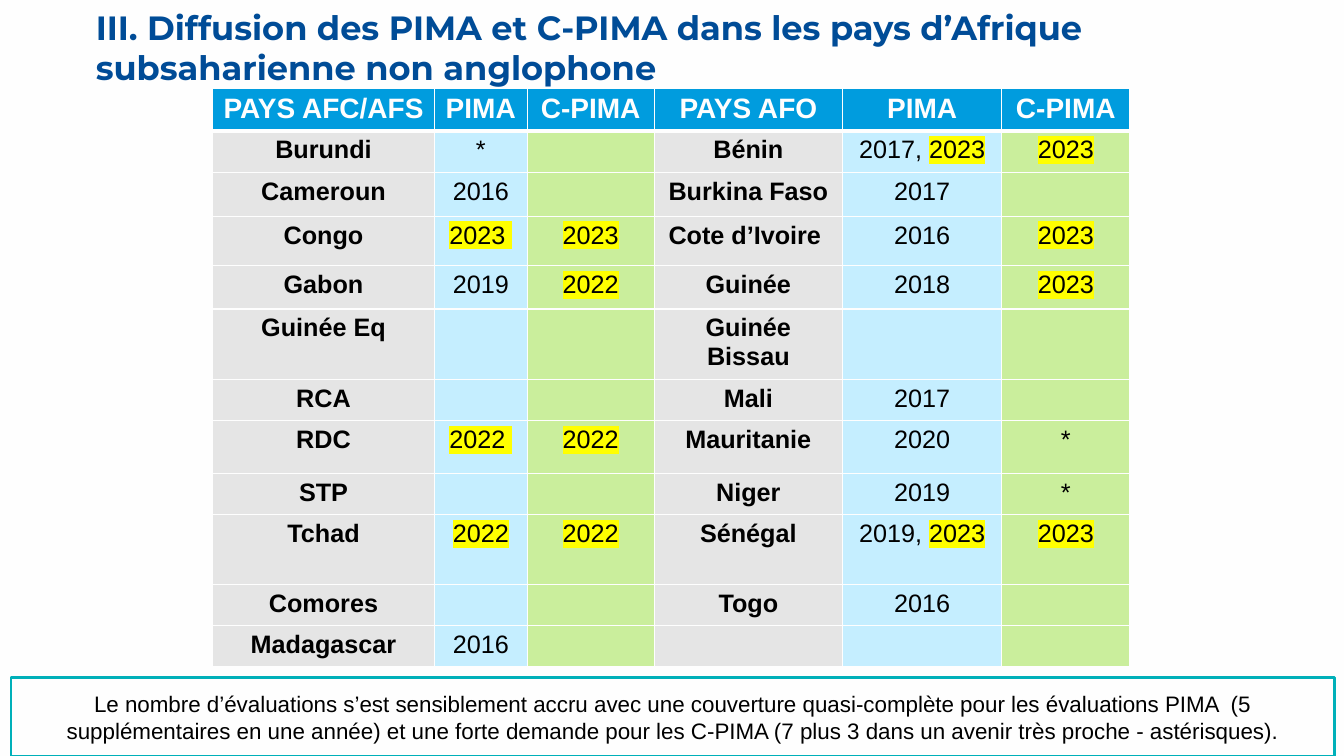
import lxml.etree
import pptx
import pptx.dml.color
import pptx.enum.shapes
import pptx.enum.text
import pptx.oxml.ns
import pptx.util

HEADER = ["PAYS AFC/AFS", "PIMA", "C-PIMA", "PAYS AFO", "PIMA", "C-PIMA"]
COUNTRIES = [
    ["Burundi", "*", "", "Bénin", "2017, 2023", "2023"],
    ["Cameroun", "2016", "", "Burkina Faso", "2017", ""],
    ["Congo", "2023 ", "2023", "Cote d’Ivoire ", "2016", "2023"],
    ["Gabon", "2019", "2022", "Guinée", "2018", "2023"],
    ["Guinée Eq", "", "", "Guinée Bissau", "", ""],
    ["RCA", "", "", "Mali", "2017", ""],
    ["RDC", "2022 ", "2022", "Mauritanie", "2020", "*"],
    ["STP", "", "", "Niger", "2019", "*"],
    ["Tchad", "2022", "2022", "Sénégal", "2019, 2023", "2023"],
    ["Comores", "", "", "Togo", "2016", ""],
    ["Madagascar", "2016", "", "", "", ""],
]
COLUMN_WIDTHS = [26.4, 11.04, 15.12, 22.44, 18.96, 15.24]
ROW_HEIGHTS = [5.1, 4.95, 5.2, 5.9, 5.15, 8.4, 4.8, 6.35, 4.85, 8.3, 4.9, 4.9]
COLUMN_FILLS = ["E5E5E5", "C5EEFF", "CAEE9C"]
WHITE, BLACK, NAVY, BLUE, TEAL, YELLOW = (
    "FEFEFE", "000000", "004C97", "009CDE", "00B0B9", "FFFF00")
RECENT = ("2022", "2023")


def color(code):
    """Turn a hex string into a colour."""
    return pptx.dml.color.RGBColor.from_string(code)


def apply(target, values):
    """Set each named attribute on the target."""
    for name, value in values.items():
        setattr(target, name, value)


class Page:
    """Hold the style and the current slide on a 160 by 90 grid."""

    unit = pptx.util.Inches(1) / 12

    def __init__(self, deck):
        """Add a title-only slide with a plain background."""
        apply(deck, {"slide_width": self.length(160), "slide_height": self.length(90)})
        self.slide = deck.slides.add_slide(deck.slide_layouts[5])
        self.paint(self.slide.background, WHITE)

    def length(self, cells):
        """Convert grid cells to a slide length."""
        return pptx.util.Emu(round(cells * self.unit))

    def place(self, *cells):
        """Convert left, top, width and height to lengths."""
        return [self.length(value) for value in cells]

    def paint(self, item, code):
        """Give an item a solid fill."""
        item.fill.solid()
        item.fill.fore_color.rgb = color(code)

    def add_span(self, para, text, size, code, bold=False, face="Arial", highlight=None):
        """Add one formatted span to a paragraph."""
        span = para.add_run()
        span.text = text
        span.font.color.rgb = color(code)
        apply(span.font, {"size": pptx.util.Pt(size), "bold": bold, "name": face})
        if highlight:
            mark = lxml.etree.Element(pptx.oxml.ns.qn("a:highlight"))
            swatch = lxml.etree.SubElement(mark, pptx.oxml.ns.qn("a:srgbClr"))
            swatch.set("val", highlight)
            properties = span._r.get_or_add_rPr()
            properties.find(pptx.oxml.ns.qn("a:solidFill")).addnext(mark)

    def title(self, text, *cells):
        """Move and format the title placeholder."""
        box = self.slide.shapes.title
        apply(box, dict(zip(("left", "top", "width", "height"), self.place(*cells))))
        apply(box.text_frame, {
            "margin_left": 0, "margin_top": 0, "margin_right": 0, "margin_bottom": 0,
            "word_wrap": True, "auto_size": pptx.enum.text.MSO_AUTO_SIZE.NONE,
            "vertical_anchor": pptx.enum.text.MSO_ANCHOR.MIDDLE})
        para = box.text_frame.paragraphs[0]
        para.alignment = pptx.enum.text.PP_ALIGN.LEFT
        self.add_span(para, text, 24, NAVY, True, "Montserrat")

    def border(self, cell, bottom):
        """Draw the four borders of a cell."""
        widths = {"lnL": 1, "lnR": 1, "lnT": 1, "lnB": bottom}
        properties = cell._tc.get_or_add_tcPr()
        for index, (side, width) in enumerate(widths.items()):
            line = lxml.etree.Element(pptx.oxml.ns.qn(f"a:{side}"))
            line.set("w", str(pptx.util.Pt(width)))
            fill = lxml.etree.SubElement(line, pptx.oxml.ns.qn("a:solidFill"))
            lxml.etree.SubElement(fill, pptx.oxml.ns.qn("a:srgbClr")).set("val", WHITE)
            properties.insert(index, line)

    def table(self, rows, left, top):
        """Add the country table."""
        frame = self.slide.shapes.add_table(
            len(rows), len(COLUMN_WIDTHS),
            *self.place(left, top, sum(COLUMN_WIDTHS), sum(ROW_HEIGHTS)))
        for column, width in zip(frame.table.columns, COLUMN_WIDTHS):
            column.width = self.length(width)
        for row, height in zip(frame.table.rows, ROW_HEIGHTS):
            row.height = self.length(height)
        for row_index, row in enumerate(rows):
            for column_index, text in enumerate(row):
                cell = frame.table.cell(row_index, column_index)
                self.fill_cell(cell, text, row_index == 0, column_index % 3)

    def fill_cell(self, cell, text, heading, kind):
        """Paint a cell and highlight its recent years."""
        self.paint(cell, BLUE if heading else COLUMN_FILLS[kind])
        self.border(cell, 3 if heading else 1)
        para = cell.text_frame.paragraphs[0]
        para.alignment = pptx.enum.text.PP_ALIGN.CENTER
        earlier, comma, latest = text.rpartition(", ")
        size, code = (20, WHITE) if heading else (18, BLACK)
        for part in filter(None, (earlier + comma, latest)):
            highlight = YELLOW if part.startswith(RECENT) else None
            self.add_span(para, part, size, code, heading or kind == 0, highlight=highlight)

    def message(self, text, *cells):
        """Add the framed conclusion."""
        box = self.slide.shapes.add_shape(
            pptx.enum.shapes.MSO_SHAPE.RECTANGLE, *self.place(*cells))
        box.shadow.inherit = False
        self.paint(box, WHITE)
        box.line.color.rgb = color(TEAL)
        box.line.width = pptx.util.Pt(2)
        apply(box.text_frame, {
            "word_wrap": True, "vertical_anchor": pptx.enum.text.MSO_ANCHOR.MIDDLE})
        para = box.text_frame.paragraphs[0]
        para.alignment = pptx.enum.text.PP_ALIGN.CENTER
        self.add_span(para, text, 16, BLACK)


def main():
    """Build and save the deck."""
    deck = pptx.Presentation()
    page = Page(deck)
    page.table([HEADER] + COUNTRIES, 25.32, 10.5)
    page.title("III. Diffusion des PIMA et C-PIMA dans les pays d’Afrique "
               "subsaharienne non anglophone", 11.4, 1.44, 142.56, 8.28)
    page.message("Le nombre d’évaluations s’est sensiblement accru avec une couverture "
                 "quasi-complète pour les évaluations PIMA  (5 supplémentaires en une "
                 "année) et une forte demande pour les C-PIMA (7 plus 3 dans un avenir "
                 "très proche - astérisques).", 1.32, 80.64, 157.56, 9.36)
    deck.save("out.pptx")


if __name__ == "__main__":
    main()
